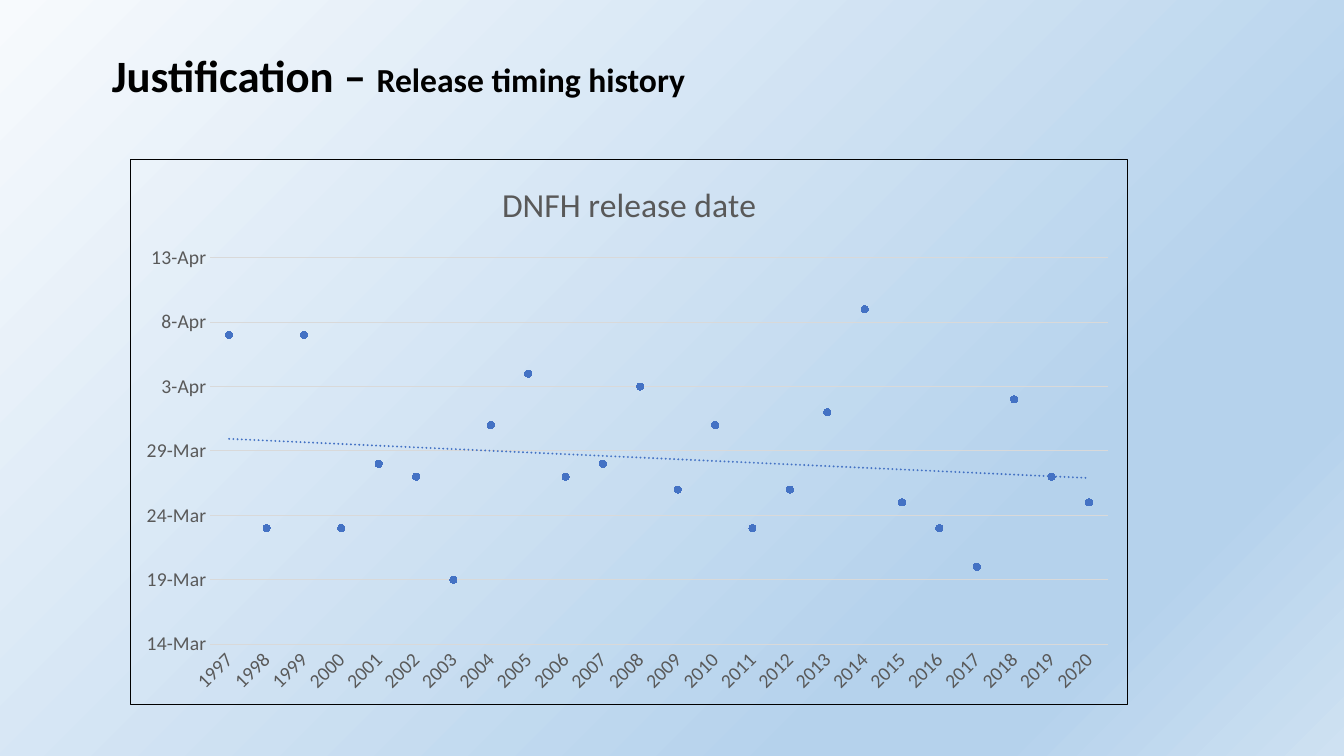
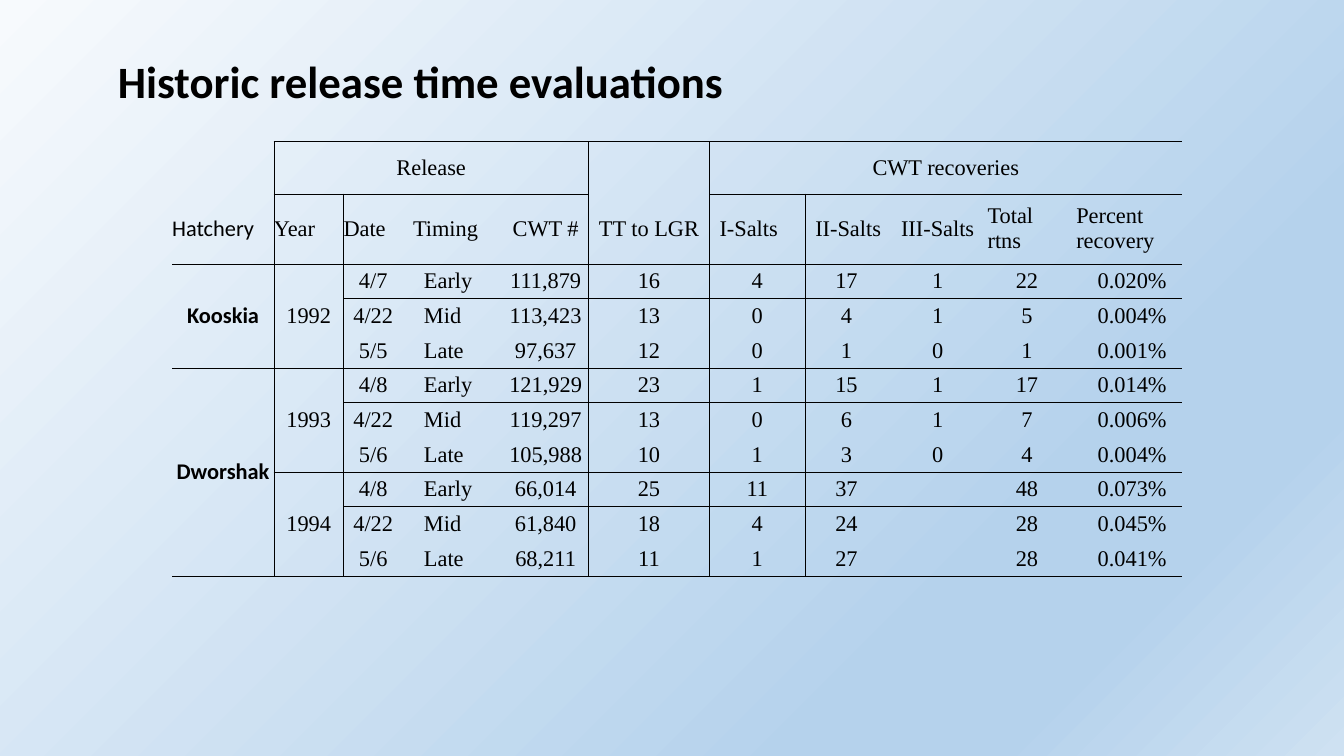
from pptx import Presentation
from pptx.chart.data import CategoryChartData as Data
from pptx.dml.color import RGBColor
from pptx.enum.chart import XL_CHART_TYPE as Kind, XL_MARKER_STYLE as Mark
from pptx.enum.chart import XL_TICK_MARK as Tick
from pptx.enum.text import MSO_ANCHOR as Anchor, MSO_AUTO_SIZE as Fit, PP_ALIGN as Align
from pptx.oxml import parse_xml
from pptx.oxml.ns import nsdecls, qn
from pptx.util import Pt

BLACK = RGBColor(0x00, 0x00, 0x00)
GREY = RGBColor(0x59, 0x59, 0x59)
PALE = RGBColor(0xD9, 0xD9, 0xD9)
BLUE = RGBColor(0x44, 0x72, 0xC4)
ICE = RGBColor(0xF7, 0xFA, 0xFD)
SKY = RGBColor(0xB5, 0xD2, 0xEC)
MIST = RGBColor(0xCE, 0xE1, 0xF2)
SANS, SERIF = "Calibri", "Times New Roman"
NS = nsdecls("a", "c")


def write(frame, text, size=16, font=SERIF, bold=False, color=BLACK, align=Align.LEFT):
    """Add a formatted run to the first paragraph of a text frame."""
    para = frame.paragraphs[0]
    para.alignment = align
    run = para.add_run()
    run.text = text
    run.font.size, run.font.name, run.font.bold = Pt(size), font, bold
    run.font.color.rgb = color


def add_slide(left, top, width, parts):
    """Add a slide whose title is made of (text, size) parts."""
    slide = deck.slides.add_slide(deck.slide_layouts[5])
    title = slide.shapes.title
    title.left, title.top, title.width, title.height = Pt(left), Pt(top), Pt(width), Pt(46)
    frame = title.text_frame
    frame.word_wrap, frame.auto_size = True, Fit.NONE
    frame.vertical_anchor = Anchor.TOP
    for text, size in parts:
        write(frame, text, size=size, font=SANS, bold=True)
    return slide


deck = Presentation()
deck.slide_width, deck.slide_height = Pt(960), Pt(540)

# Shared gradient background
master = deck.slide_master
fill = master.background.fill
fill.gradient()
fill.gradient_angle = 315
stops = master.element.find(".//" + qn("a:gsLst"))
for stop in list(stops):
    stops.remove(stop)
for place, color in ((0, ICE), (74, SKY), (83, SKY), (100, MIST)):
    stops.append(parse_xml(
        f'<a:gs {NS} pos="{place * 1000}"><a:srgbClr val="{color}"/></a:gs>'))

# Slide 1: release dates, as day numbers, by year
slide = add_slide(72.7, 30.2, 752, [("Justification – ", 32), ("Release timing history", 24)])
dates = [45389, 45374, 45389, 45374, 45379, 45378, 45370, 45382,
         45386, 45378, 45379, 45385, 45377, 45382, 45374, 45377,
         45383, 45391, 45376, 45374, 45371, 45384, 45378, 45376]
data = Data(number_format="d\\-mmm")
data.categories = [str(year) for year in range(1997, 2021)]
data.add_series("Series 1", dates)
chart = slide.shapes.add_chart(
    Kind.LINE_MARKERS, Pt(93), Pt(113.8), Pt(712.8), Pt(389.5), data).chart
chart.has_legend = False
chart.font.size, chart.font.name = Pt(10), SANS
chart.has_title = True
write(chart.chart_title.text_frame, "DNFH release date",
      size=24, font=SANS, color=GREY, align=Align.CENTER)

days, years = chart.value_axis, chart.category_axis
for axis in (days, years):
    axis.major_tick_mark = axis.minor_tick_mark = Tick.NONE
    font = axis.tick_labels.font
    font.size, font.name, font.color.rgb = Pt(14), SANS, GREY
days.minimum_scale, days.maximum_scale, days.major_unit = 45365, 45395, 5
days.tick_labels.number_format = "d\\-mmm"
days.tick_labels.number_format_is_linked = False
days.format.line.fill.background()
for line in (days.major_gridlines.format.line, years.format.line):
    line.color.rgb, line.width = PALE, Pt(0.75)

chart.plots[0].vary_by_categories = False
series = chart.plots[0].series[0]
series.smooth = False
series.format.line.fill.background()
series.marker.style, series.marker.size = Mark.CIRCLE, 5
series.marker.format.fill.solid()
series.marker.format.fill.fore_color.rgb = BLUE
series.marker.format.line.color.rgb = BLUE

# Trend line, slanted labels, frame and plot area
root = chart.element
root.find(".//" + qn("c:cat")).addprevious(parse_xml(
    f'<c:trendline {NS}><c:spPr><a:ln w="{Pt(1.5)}" cap="rnd"><a:solidFill>'
    f'<a:srgbClr val="{BLUE}"/></a:solidFill><a:prstDash val="sysDot"/></a:ln></c:spPr>'
    '<c:trendlineType val="linear"/><c:dispRSqr val="0"/><c:dispEq val="0"/></c:trendline>'))
labels = root.find(".//" + qn("c:catAx")).find(qn("c:txPr"))
labels.find(qn("a:bodyPr")).set("rot", "-2700000")
root.find(qn("c:chart")).addnext(parse_xml(
    f'<c:spPr {NS}><a:noFill/><a:ln w="{Pt(0.75)}"><a:solidFill>'
    f'<a:srgbClr val="{BLACK}"/></a:solidFill></a:ln></c:spPr>'))
plot = root.find(".//" + qn("c:plotArea"))
for old in plot.findall(qn("c:layout")):
    plot.remove(old)
spots = "".join(f'<c:{key} val="{val}"/>' for key, val in (
    ("layoutTarget", "inner"), ("xMode", "edge"), ("yMode", "edge"),
    ("x", 0.08), ("y", 0.18), ("w", 0.9), ("h", 0.71)))
plot.insert(0, parse_xml(
    f'<c:layout {NS}><c:manualLayout>{spots}</c:manualLayout></c:layout>'))

# Slide 2: table of release trials
slide = add_slide(77, 34.6, 577, [("Historic release time evaluations", 32)])
rows = [
    ["", "Release", "", "", "", "", "CWT recoveries", "", "", "", ""],
    ["Hatchery", "Year", "Date", "Timing", "CWT #", "TT to LGR",
     "I-Salts", "II-Salts", "III-Salts", "Total rtns", "Percent recovery"],
    ["Kooskia", "1992", "4/7", "Early", "111,879", "16", "4", "17", "1", "22", "0.020%"],
    ["", "", "4/22", "Mid", "113,423", "13", "0", "4", "1", "5", "0.004%"],
    ["", "", "5/5", "Late", "97,637", "12", "0", "1", "0", "1", "0.001%"],
    ["Dworshak", "1993", "4/8", "Early", "121,929", "23", "1", "15", "1", "17", "0.014%"],
    ["", "", "4/22", "Mid", "119,297", "13", "0", "6", "1", "7", "0.006%"],
    ["", "", "5/6", "Late", "105,988", "10", "1", "3", "0", "4", "0.004%"],
    ["", "1994", "4/8", "Early", "66,014", "25", "11", "37", "", "48", "0.073%"],
    ["", "", "4/22", "Mid", "61,840", "18", "4", "24", "", "28", "0.045%"],
    ["", "", "5/6", "Late", "68,211", "11", "1", "27", "", "28", "0.041%"],
]
widths = [72.7, 49.7, 42.5, 71.3, 61.2, 86.4, 68.4, 59, 71.3, 56.2, 82.8]
heights = [37.3, 50] + [24.8] * 9
# Left insets of the left-aligned columns; all others are centred
head = {0: 0, 1: 0, 2: 0, 3: 7.2, 6: 7.2, 7: 7.2, 9: 0, 10: 7.2}
body = {3: 15, 10: 22.5}
# (row, column): (rows, columns) of the merged cells
spans = {(0, 1): (1, 4), (0, 6): (1, 5), (2, 0): (3, 1), (2, 1): (3, 1),
         (5, 0): (6, 1), (5, 1): (3, 1), (8, 1): (3, 1)}
# Columns ruled above each row, and columns ruled on their left
across = {0: range(1, 11), 1: (1, 2, 3, 4, 6, 7, 8, 9, 10), 2: range(11),
          5: range(11), 8: range(1, 11), 11: range(11)}
down = (1, 5, 6)

shape = slide.shapes.add_table(11, 11, Pt(123), Pt(101.2), Pt(sum(widths)), Pt(sum(heights)))
table = shape.table
table.first_row = table.horz_banding = False
style = shape.element.find(".//" + qn("a:tableStyleId"))
style.text = "{2D5ABB26-0587-4C30-8999-92F81FD0307C}"
for col, width in zip(table.columns, widths):
    col.width = Pt(width)
for row, height in zip(table.rows, heights):
    row.height = Pt(height)
for (r, c), (high, wide) in spans.items():
    table.cell(r, c).merge(table.cell(r + high - 1, c + wide - 1))

for r, row in enumerate(rows):
    lefts = {0: {}, 1: head}.get(r, body)
    for c, text in enumerate(row):
        cell = table.cell(r, c)
        cell.margin_left = Pt(lefts.get(c, 0))
        cell.margin_right = cell.margin_top = cell.margin_bottom = 0
        cell.vertical_anchor = Anchor.MIDDLE
        if not cell.is_spanned:
            name = c == 0 and r > 1
            write(cell.text_frame, text, font=SERIF if c else SANS, bold=name,
                  align=Align.LEFT if c in lefts else Align.CENTER)
            high, wide = spans.get((r, c), (1, 1))
            edges = (("L", c in down), ("R", c + wide in down),
                     ("T", c in across.get(r, ())), ("B", c in across.get(r + high, ())))
            for side, ruled in edges:
                if ruled:
                    cell._tc.get_or_add_tcPr().append(parse_xml(
                        f'<a:ln{side} {NS} w="{Pt(0.5)}"><a:solidFill>'
                        f'<a:srgbClr val="{BLACK}"/></a:solidFill></a:ln{side}>'))
        cell.fill.background()

deck.save("out.pptx")
